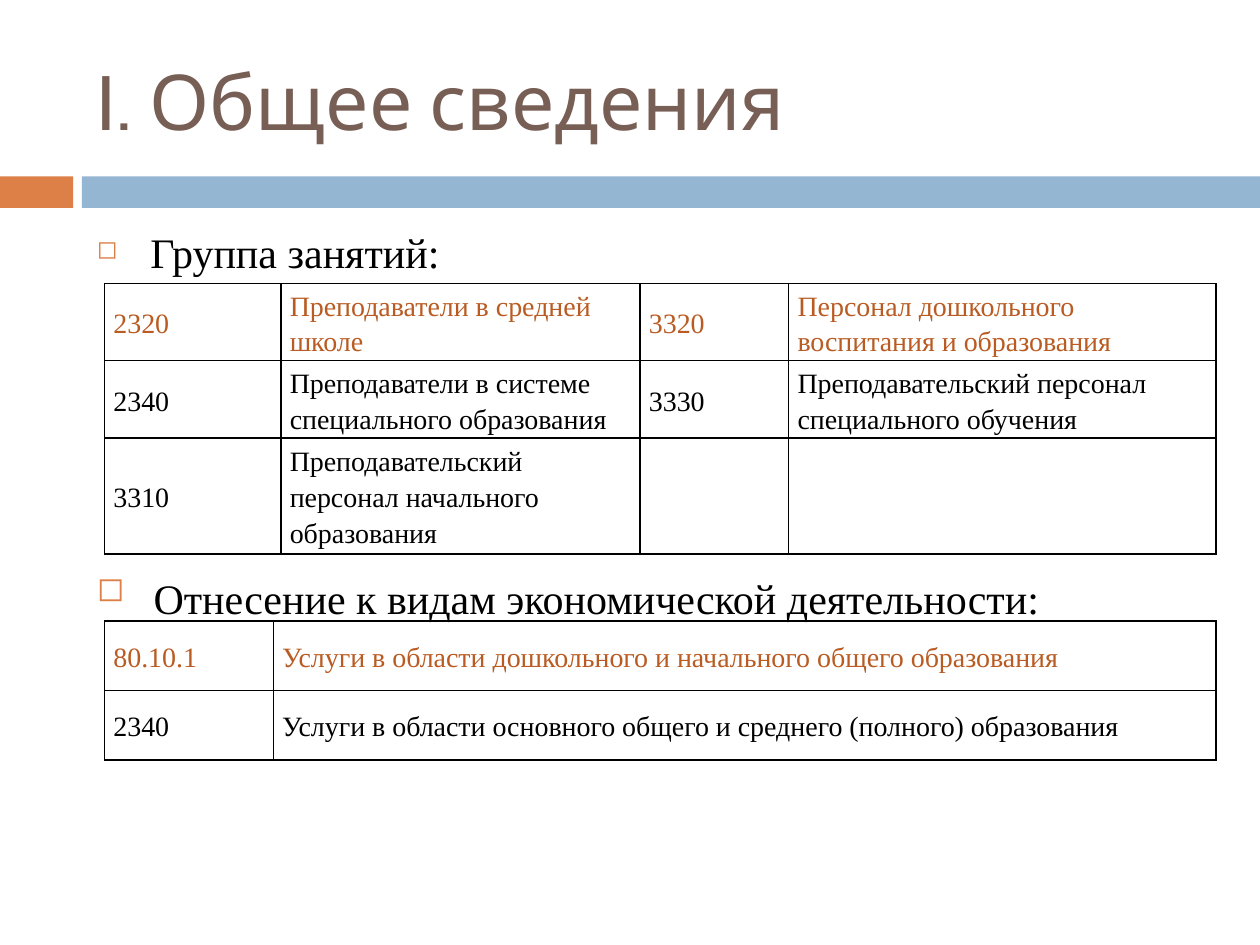
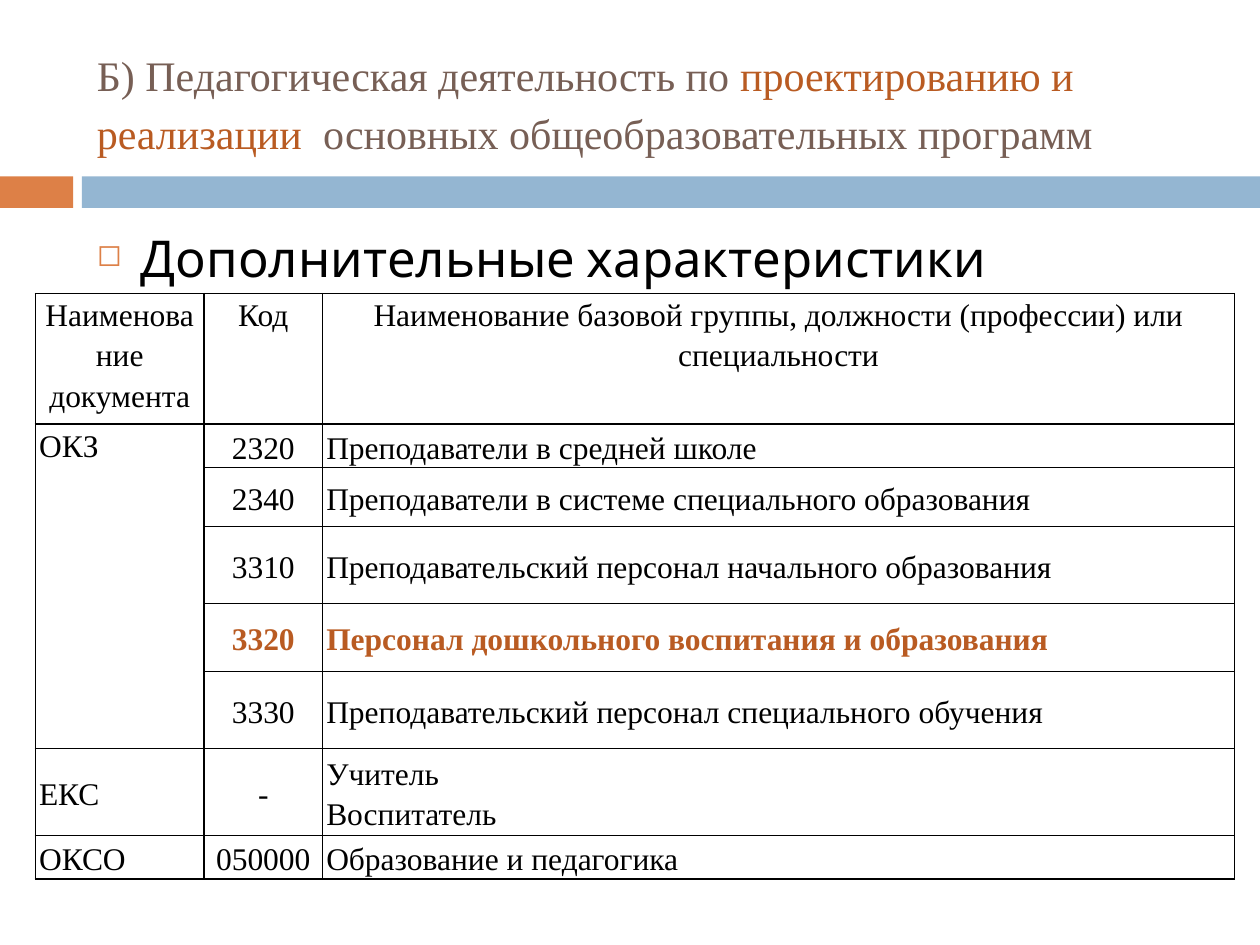
"""Builds two slides on occupation groups and codes of teaching staff."""
from lxml import etree
from pptx import Presentation
from pptx.dml.color import RGBColor
from pptx.enum import shapes, text
from pptx.oxml import ns
from pptx.util import Inches, Pt

COLORS = {"orange": "DD8047", "blue": "94B6D2", "title": "775F55",
          "accent": "B95B22", "black": "000000"}
SERIF, SANS = "Times New Roman", "Cabin"
LEFT, CENTER = text.PP_ALIGN.LEFT, text.PP_ALIGN.CENTER
TOP, MIDDLE = text.MSO_ANCHOR.TOP, text.MSO_ANCHOR.MIDDLE
BANDS = [(0, 0.58, "orange"), (0.65, 9.35, "blue")]
MARGIN, TEXT_WIDTH = 0.67, 8.92

OCCUPATIONS = {
    "at": (0.83, 2.25), "cols": [1.4, 2.85, 1.18, 3.39], "heights": [0.57, 0.57, 0.85],
    "size": 16, "inset": 0.07, "aligns": [LEFT] * 4, "accent_row": 0,
    "rows": [
        ["2320", "Преподаватели в средней школе",
         "3320", "Персонал дошкольного воспитания и образования"],
        ["2340", "Преподаватели в системе специального образования",
         "3330", "Преподавательский персонал специального обучения"],
        ["3310", "Преподавательский персонал начального образования", "", ""],
    ],
}
ACTIVITIES = {
    "at": (0.83, 4.93), "cols": [1.34, 7.48], "heights": [0.55, 0.55],
    "size": 16, "inset": 0.07, "aligns": [LEFT] * 2, "accent_row": 0,
    "rows": [
        ["80.10.1", "Услуги в области дошкольного и начального общего образования"],
        ["2340", "Услуги в области основного общего и среднего (полного) образования"],
    ],
}
CHARACTERISTICS = {
    "at": (0.28, 2.33), "cols": [1.34, 0.94, 7.24],
    "heights": [0.95, 0.32, 0.47, 0.61, 0.54, 0.61, 0.64, 0.32],
    "size": 18, "inset": 0.03, "aligns": [LEFT, CENTER, LEFT], "accent_row": 4,
    "header": True, "merge": ((1, 0), (5, 0)),
    "rows": [
        ["Наименование документа", "Код",
         "Наименование базовой группы, должности (профессии) или специальности"],
        ["ОКЗ", "2320", "Преподаватели в средней школе"],
        ["", "2340", "Преподаватели в системе специального образования"],
        ["", "3310", "Преподавательский персонал начального образования"],
        ["", "3320", "Персонал дошкольного воспитания и образования"],
        ["", "3330", "Преподавательский персонал специального обучения"],
        ["ЕКС", "-", "Учитель \nВоспитатель"],
        ["ОКСО", "050000", "Образование и педагогика"],
    ],
}
SLIDES = [
    {
        "title": [("I. Общее сведения", 44, SANS, "title")], "title_spacing": 1,
        "headings": [
            (1.75, 0.5, [(" ", 24, SANS, "black"), ("Группа занятий:", 24, SERIF, "black")]),
            (4.38, 0.71, [(" ", 32, SANS, "black"),
                          ("Отнесение к видам экономической деятельности:", 24, SERIF, "black")]),
        ],
        "tables": [OCCUPATIONS, ACTIVITIES],
    },
    {
        "title": [("Б) Педагогическая деятельность по ", 24, SERIF, "title"),
                  ("проектированию и реализации  ", 24, SERIF, "accent"),
                  ("основных общеобразовательных программ", 24, SERIF, "title")],
        "title_spacing": 1.15,
        "headings": [(1.75, 0.58, [("Дополнительные характеристики", 29, SANS, "black")])],
        "tables": [CHARACTERISTICS],
    },
]


def rgb(name):
    return RGBColor.from_string(COLORS[name])


def add_run(paragraph, words, size, font, color, bold=False):
    run = paragraph.add_run()
    run.text = words
    run.font.size, run.font.name, run.font.bold = Pt(size), font, bold
    run.font.color.rgb = rgb(color)
    for script in ("a:ea", "a:cs"):
        etree.SubElement(run.font._element, ns.qn(script), typeface=font)


def add_text(slide, top, height, runs, anchor):
    frame = slide.shapes.add_textbox(Inches(MARGIN), Inches(top),
                                     Inches(TEXT_WIDTH), Inches(height)).text_frame
    frame.word_wrap, frame.vertical_anchor = True, anchor
    paragraph = frame.paragraphs[0]
    for run in runs:
        add_run(paragraph, *run)
    return paragraph


def add_heading(slide, top, height, runs):
    paragraph = add_text(slide, top, height, runs, TOP)
    paragraph.space_before = Pt(7)
    props = paragraph._p.get_or_add_pPr()
    props.set("marL", str(Inches(0.35)))
    props.set("indent", str(-Inches(0.35)))
    bullet_color = etree.SubElement(props, ns.qn("a:buClr"))
    etree.SubElement(bullet_color, ns.qn("a:srgbClr"), val=COLORS["orange"])
    etree.SubElement(props, ns.qn("a:buSzPct"), val="60000")
    etree.SubElement(props, ns.qn("a:buChar"), char="◻")


def add_borders(cell):
    props = cell._tc.get_or_add_tcPr()
    for place, side in enumerate(("a:lnL", "a:lnR", "a:lnT", "a:lnB")):
        line = etree.Element(ns.qn(side), w=str(Pt(1)))
        fill = etree.SubElement(line, ns.qn("a:solidFill"))
        etree.SubElement(fill, ns.qn("a:srgbClr"), val=COLORS["black"])
        props.insert(place, line)


def add_table(slide, content):
    cols, heights = content["cols"], content["heights"]
    left, top = content["at"]
    table = slide.shapes.add_table(len(heights), len(cols), Inches(left), Inches(top),
                                   Inches(sum(cols)), Inches(sum(heights))).table
    table.first_row = table.horz_banding = False
    for column, width in zip(table.columns, cols):
        column.width = Inches(width)
    for row, height in zip(table.rows, heights):
        row.height = Inches(height)
    if "merge" in content:
        first, last = content["merge"]
        table.cell(*first).merge(table.cell(*last))
    for r, row in enumerate(content["rows"]):
        is_header = r == 0 and "header" in content
        is_accent = r == content["accent_row"]
        for c, words in enumerate(row):
            cell = table.cell(r, c)
            cell.fill.background()
            add_borders(cell)
            cell.margin_left = cell.margin_right = Inches(content["inset"])
            cell.margin_top = cell.margin_bottom = 0
            cell.vertical_anchor = TOP if is_header or cell.is_merge_origin else MIDDLE
            for n, line in enumerate(words.split("\n") if words else []):
                frame = cell.text_frame
                paragraph = frame.add_paragraph() if n else frame.paragraphs[0]
                paragraph.line_spacing = 1.15
                paragraph.alignment = CENTER if is_header else content["aligns"][c]
                add_run(paragraph, line, content["size"], SERIF,
                        "accent" if is_accent else "black", is_accent and "header" in content)


def add_bands(slide):
    for left, width, color in BANDS:
        band = slide.shapes.add_shape(shapes.MSO_SHAPE.RECTANGLE, Inches(left), Inches(1.4),
                                      Inches(width), Inches(0.25))
        band.shadow.inherit = False
        band.fill.solid()
        band.fill.fore_color.rgb = rgb(color)
        band.line.fill.background()


def main():
    deck = Presentation()
    deck.slide_width, deck.slide_height = Inches(10), Inches(7.5)
    for content in SLIDES:
        slide = deck.slides.add_slide(deck.slide_layouts[6])
        add_bands(slide)
        title = add_text(slide, 0.25, 1.08, content["title"], MIDDLE)
        title.line_spacing = content["title_spacing"]
        for heading in content["headings"]:
            add_heading(slide, *heading)
        for table in content["tables"]:
            add_table(slide, table)
    deck.save("out.pptx")


if __name__ == "__main__":
    main()
